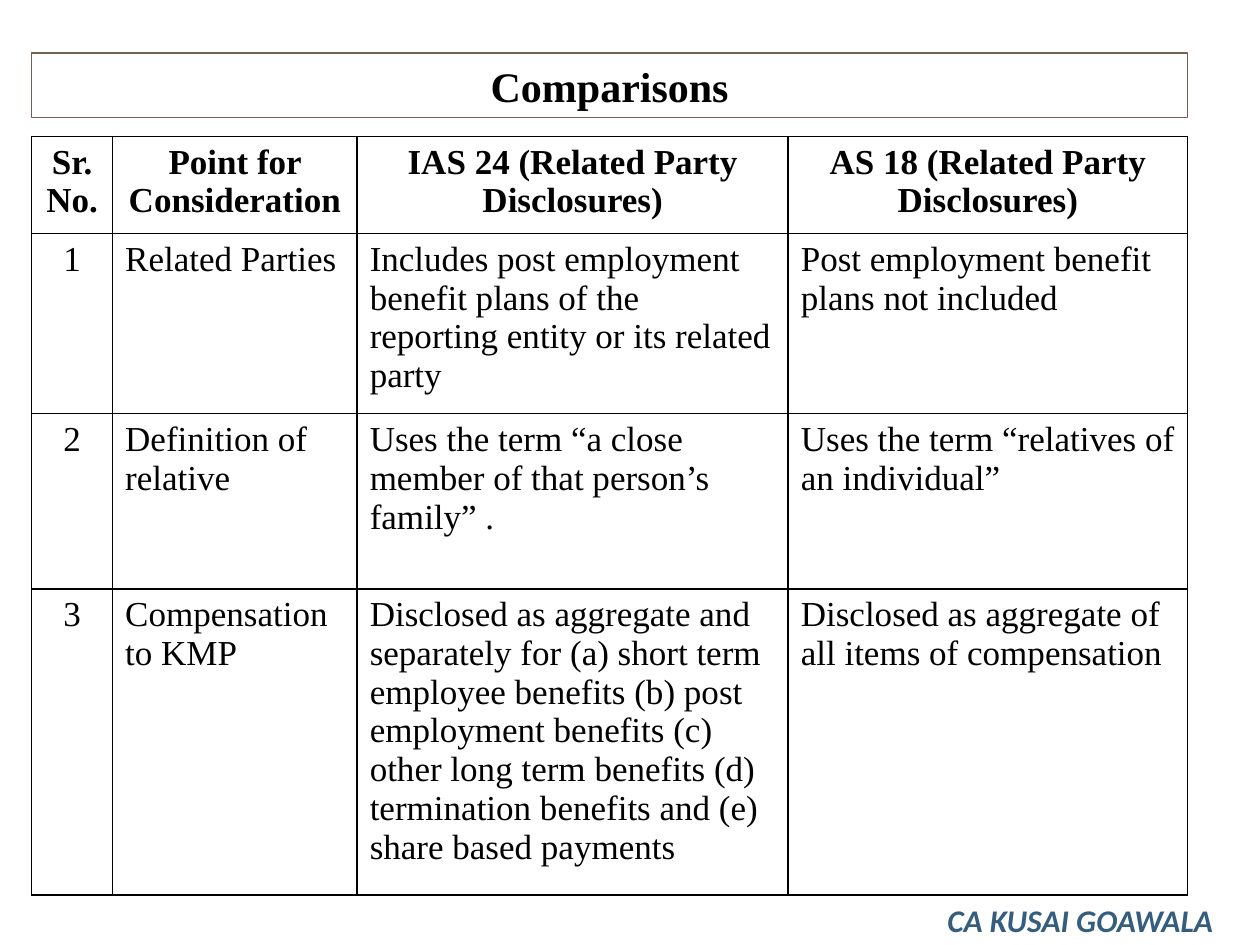
import pptx
import pptx.util
import pptx.dml.color
import pptx.enum.text
import pptx.oxml
import pptx.oxml.ns

Cm, Pt = pptx.util.Cm, pptx.util.Pt
RGB = pptx.dml.color.RGBColor.from_string
ALIGN = pptx.enum.text.PP_ALIGN
ANCHOR = pptx.enum.text.MSO_ANCHOR
AUTO = pptx.enum.text.MSO_AUTO_SIZE

TITLE = "Comparisons"
AUTHOR = "CA KUSAI GOAWALA"
ROWS = [
    ("Sr. No.", "Point for Consideration",
     "IAS 24 (Related Party Disclosures)", "AS 18 (Related Party Disclosures)"),
    ("1", "Related Parties",
     "Includes post employment benefit plans of the reporting entity or its related party",
     "Post employment benefit plans not included"),
    ("2", "Definition of relative",
     "Uses the term “a close member of that person’s family” .",
     "Uses the term “relatives of an individual”"),
    ("3", "Compensation to KMP",
     "Disclosed as aggregate and separately for (a) short term employee benefits "
     "(b) post employment benefits (c) other long term benefits "
     "(d) termination benefits and (e) share based payments",
     "Disclosed as aggregate of all items of compensation"),
]

THEME = {
    "title": {"name": "Times New Roman", "size": Pt(24), "bold": True, "color": "000000"},
    "header": {"name": "Times New Roman", "size": Pt(20), "bold": True, "color": "000000"},
    "body": {"name": "Times New Roman", "size": Pt(20), "bold": False, "color": "000000"},
    "author": {"name": "Calibri", "size": Pt(18), "bold": True, "italic": True,
               "color": "355D7E"},
    "title_line": "775F55",
    "grid_line": "000000",
}

LEFT = 0.64
COL_WIDTHS = [1.63, 4.93, 8.69, 8.05]
ROW_HEIGHTS = [1.96, 3.63, 3.53, 6.17]
WIDTH = sum(COL_WIDTHS)
TITLE_TOP, TITLE_HEIGHT = 1.07, 1.3
TABLE_TOP = 2.75


def write(tf, text, style, align):
    p = tf.paragraphs[0]
    p.alignment = align
    r = p.add_run()
    r.text = text
    for key, value in THEME[style].items():
        if key == "color":
            r.font.color.rgb = RGB(value)
        else:
            setattr(r.font, key, value)


def set_borders(cell):
    tc_pr = cell._tc.get_or_add_tcPr()
    for side in ("lnL", "lnR", "lnT", "lnB"):
        tc_pr.append(pptx.oxml.parse_xml(
            f'<a:{side} {pptx.oxml.ns.nsdecls("a")} w="{Pt(1)}"><a:solidFill>'
            f'<a:srgbClr val="{THEME["grid_line"]}"/></a:solidFill></a:{side}>'))


def add_title(s):
    sp = s.shapes.title
    sp.left, sp.top = Cm(LEFT), Cm(TITLE_TOP)
    sp.width, sp.height = Cm(WIDTH), Cm(TITLE_HEIGHT)
    sp.line.color.rgb = RGB(THEME["title_line"])
    sp.line.width = Pt(0.75)
    tf = sp.text_frame
    tf.auto_size = AUTO.NONE
    tf.vertical_anchor = ANCHOR.MIDDLE
    write(tf, TITLE, "title", ALIGN.CENTER)


def add_comparison(s):
    table = s.shapes.add_table(
        len(ROWS), len(COL_WIDTHS), Cm(LEFT), Cm(TABLE_TOP),
        Cm(WIDTH), Cm(sum(ROW_HEIGHTS))).table
    table.horz_banding = False
    table.first_row = False
    for column, width in zip(table.columns, COL_WIDTHS):
        column.width = Cm(width)
    for i, (values, height) in enumerate(zip(ROWS, ROW_HEIGHTS)):
        table.rows[i].height = Cm(height)
        for j, text in enumerate(values):
            cell = table.cell(i, j)
            set_borders(cell)
            cell.fill.background()
            centred = i == 0 or j == 0
            write(cell.text_frame, text, "header" if i == 0 else "body",
                  ALIGN.CENTER if centred else ALIGN.LEFT)


def add_author(s):
    tf = s.shapes.add_textbox(Cm(18.85), Cm(18.03), Cm(6.55), Cm(1.02)).text_frame
    tf.word_wrap = True
    write(tf, AUTHOR, "author", ALIGN.LEFT)


def main():
    prs = pptx.Presentation()
    prs.slide_width, prs.slide_height = Cm(25.4), Cm(19.05)
    s = prs.slides.add_slide(prs.slide_layouts.get_by_name("Title Only"))
    add_title(s)
    add_comparison(s)
    add_author(s)
    prs.save("out.pptx")


if __name__ == "__main__":
    main()
